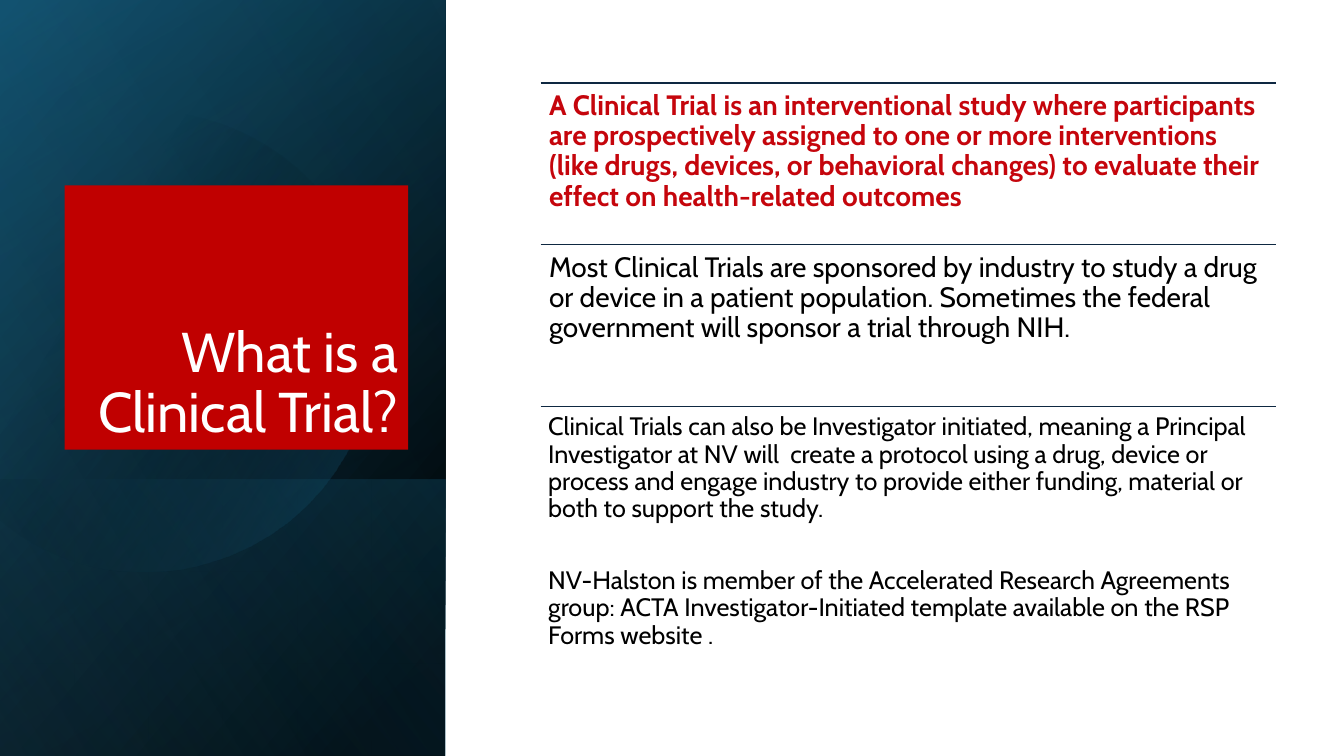
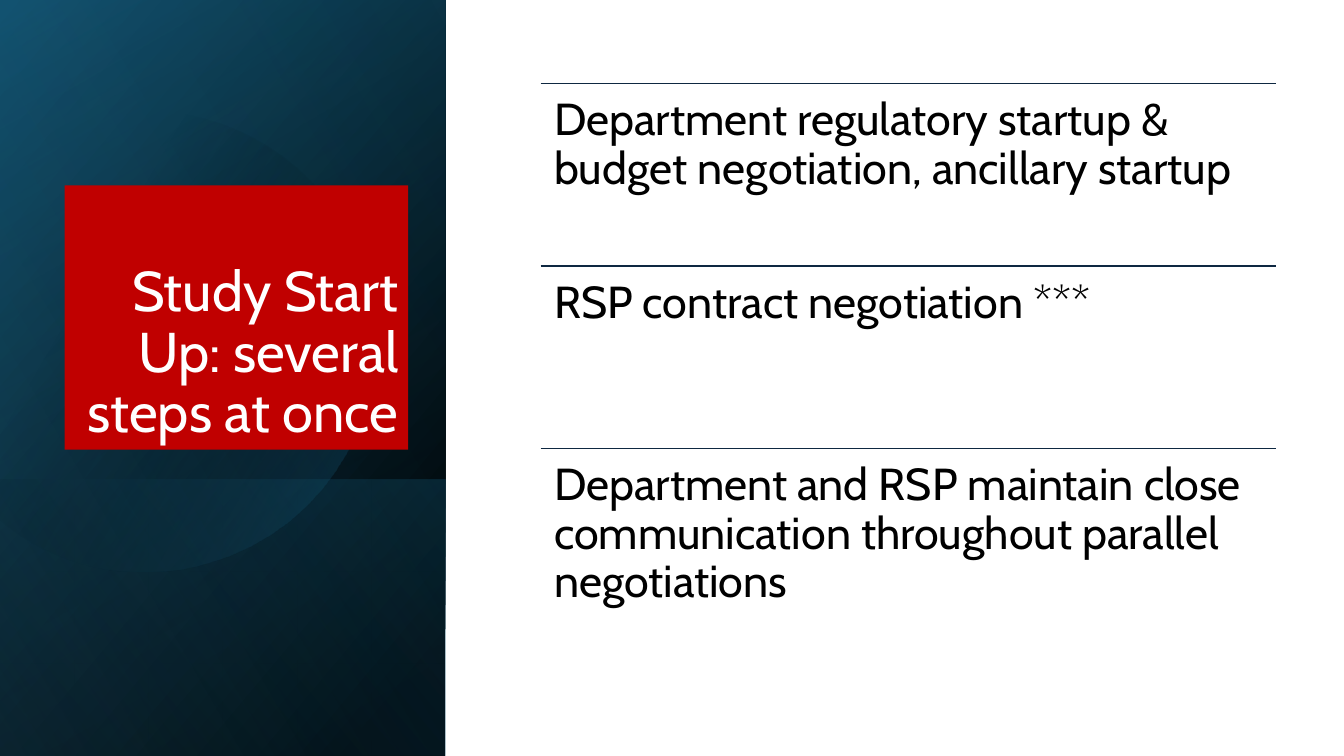
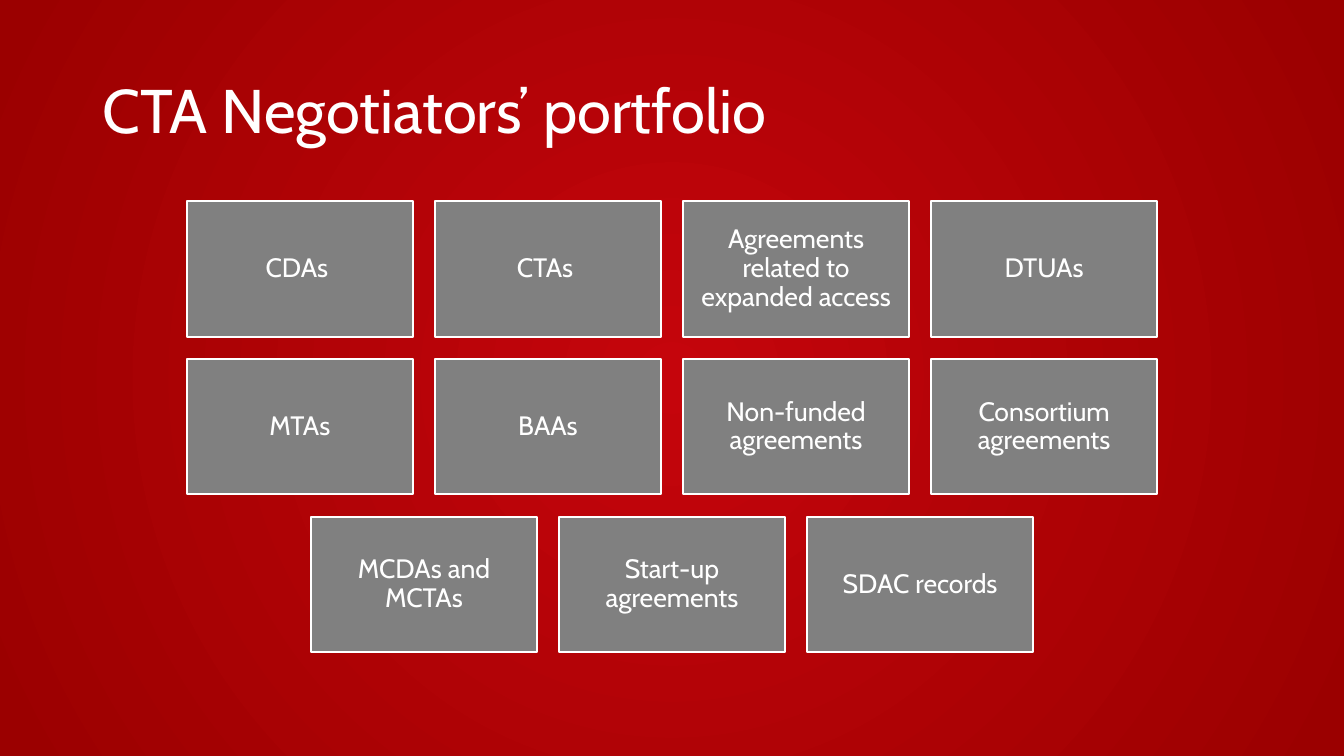
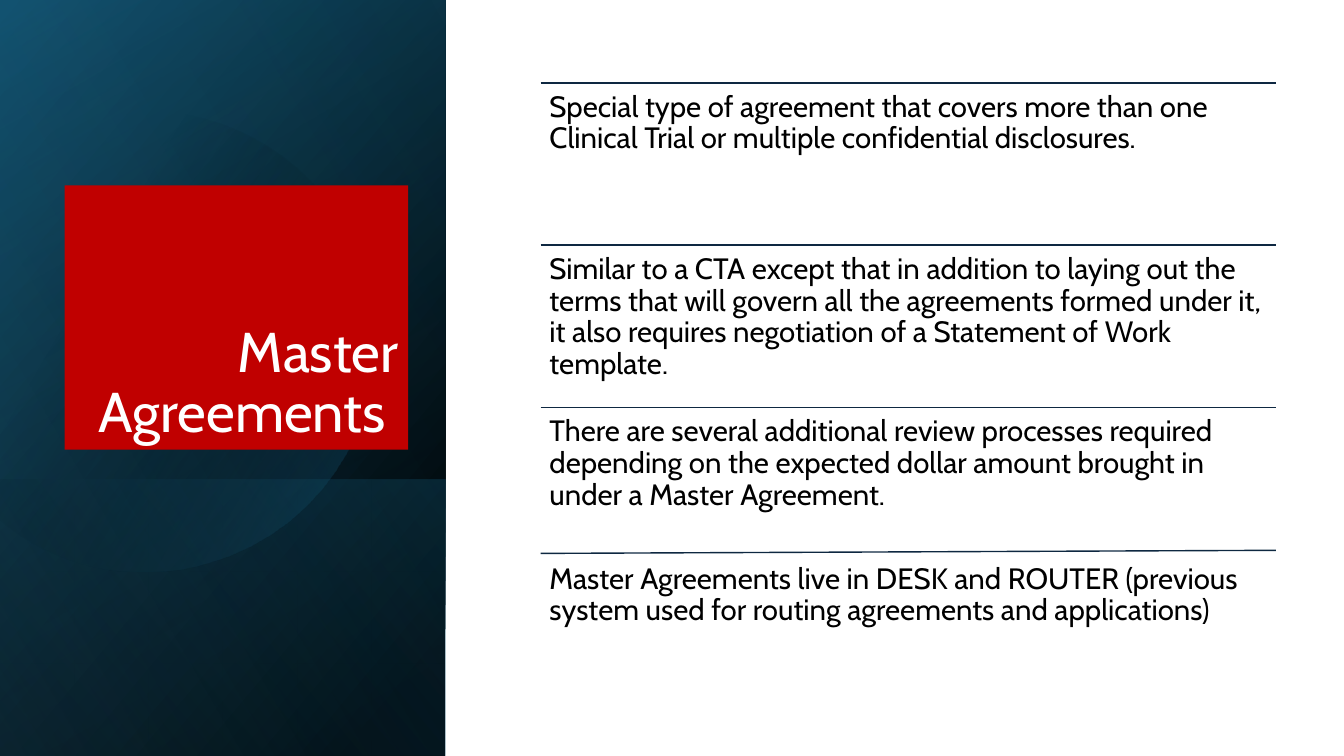
"""Build four slides about clinical trial agreements."""
from pptx import Presentation
from pptx.dml.color import RGBColor
from pptx.enum.shapes import MSO_CONNECTOR, MSO_SHAPE
from pptx.enum.text import MSO_ANCHOR, PP_ALIGN
from pptx.oxml import parse_xml
from pptx.oxml.ns import nsdecls
from pptx.util import Pt

RECTANGLE = MSO_SHAPE.RECTANGLE
STRAIGHT = MSO_CONNECTOR.STRAIGHT
TOP, MIDDLE, BOTTOM = MSO_ANCHOR.TOP, MSO_ANCHOR.MIDDLE, MSO_ANCHOR.BOTTOM
LEFT, CENTER, RIGHT = PP_ALIGN.LEFT, PP_ALIGN.CENTER, PP_ALIGN.RIGHT

FONT = "Cabin"
WHITE, BLACK, RED = "FFFFFF", "000000", "C5050C"
TITLE_RED, DARK_RED, GRAY, NAVY = "C00000", "9B0000", "808080", "0E2841"
TEAL, DEEP_TEAL, SKY = "156082", "104862", "46B1E1"

SLIDE_WIDTH, SLIDE_HEIGHT = 960, 540
PANEL_WIDTH = 318.2
TITLE_BOX = (46.1, 132.5, 245.5, 188.8)
PORTFOLIO_TITLE_BOX = (66, 29, 828, 104)
SECTION_LEFT, SECTION_WIDTH, SECTION_BOTTOM = 386.2, 525.2, 488.2
PARAGRAPH_GAP = 1.78
TILE_WIDTH, TILE_HEIGHT, TILE_GAP, TILE_TOP = 161.2, 96.7, 16, 143.8

FULL_PANEL = (0, 0, PANEL_WIDTH, SLIDE_HEIGHT)
LOWER_PANEL = (0, 342.8, PANEL_WIDTH, 197.2)
PANELS_BELOW = [
    (FULL_PANEL, [(8, BLACK, 100), (100, DEEP_TEAL, 100)], 50),
    (FULL_PANEL, [(0, BLACK, 0), (99, TEAL, 46)], 30),
    (LOWER_PANEL, [(2, TEAL, 29), (100, BLACK, 30)], 130),
]
PANEL_ABOVE = (FULL_PANEL, [(0, BLACK, 0), (99, SKY, 11)], 120)
DISC_STOPS, DISC_ANGLE = [(29, BLACK, 0), (100, TEAL, 43)], 30
DISC_CURVES = [
    [(0, 116), (17, 102), (36, 92), (58, 86)],
    [(58, 86), (74, 81), (91, 79), (107, 79)],
    [(107, 79), (177, 81), (241, 127), (261, 198)],
    [(261, 198), (287, 287), (236, 377), (149, 402)],
    [(149, 402), (95, 418), (38, 404), (0, 371)],
]
CURVE_STEPS = 16

TRIAL = {
    "title": "What is a Clinical Trial?",
    "top": 59.2, "pitch": 115.6,
    "sections": [
        (["A Clinical Trial is an interventional study where participants are prospectively assigned "
          "to one or more interventions (like drugs, devices, or behavioral changes) to evaluate "
          "their effect on health-related outcomes"],
         {"size": 20, "color": RED, "bold": True, "inset": 6}),
        (["Most Clinical Trials are sponsored by industry to study a drug or device in a patient "
          "population. Sometimes the federal government will sponsor a trial through NIH."],
         {"size": 20, "inset": 6}),
        (["Clinical Trials can also be Investigator initiated, meaning a Principal Investigator at NV "
          "will  create a protocol using a drug, device or process and engage industry to provide "
          "either funding, material or both to support the study.",
          "NV-Halston is member of the Accelerated Research Agreements group: ACTA "
          "Investigator-Initiated template available on the RSP Forms website ."],
         {"size": 18, "inset": 5.4}),
    ],
}
START_UP_STYLE = {"size": 32, "inset": 9.6}
START_UP = {
    "title": "Study Start Up: several steps at once",
    "top": 59.6, "pitch": 130.4,
    "sections": [
        (["Department regulatory startup & budget negotiation, ancillary startup"], START_UP_STYLE),
        (["RSP contract negotiation ***"], START_UP_STYLE),
        (["Department and RSP maintain close communication throughout parallel negotiations"],
         START_UP_STYLE),
    ],
}
MASTER_STYLE = {"size": 21, "inset": 6.3}
MASTER = {
    "title": "Master\vAgreements ",
    "top": 59.2, "pitch": 115.9,
    "sections": [
        (["Special type of agreement that covers more than one Clinical Trial or multiple "
          "confidential disclosures."], MASTER_STYLE),
        (["Similar to a CTA except that in addition to laying out the terms that will govern all the "
          "agreements formed under it, it also requires negotiation of a Statement of Work "
          "template."], MASTER_STYLE),
        (["There are several additional review processes required depending on the expected dollar "
          "amount brought in under a Master Agreement.",
          "Master Agreements live in DESK and ROUTER (previous system used for routing agreements "
          "and applications)"], MASTER_STYLE),
    ],
    "extra_rule": (395.3, 393.1),
}
PORTFOLIO_TITLE = "CTA Negotiators’ portfolio"
PORTFOLIO_ROWS = [
    ["CDAs ", "CTAs ", "Agreements related to expanded access", "DTUAs"],
    ["MTAs", "BAAs", "Non-funded agreements", "Consortium agreements"],
    ["MCDAs and MCTAs", "Start-up agreements", "SDAC records"],
]


def rgb(value):
    return RGBColor.from_string(value)


def set_attributes(target, values):
    for name, value in values.items():
        setattr(target, name, value)


def set_gradient(fill, owner, stops, angle=None):
    """Fill with a linear gradient, or a radial one when no angle is given."""
    fill.gradient()
    old = owner.element.xpath(".//a:gradFill")[0]
    stop_xml = "".join(
        f'<a:gs pos="{position * 1000}"><a:srgbClr val="{color}">'
        f'<a:alpha val="{opacity * 1000}"/></a:srgbClr></a:gs>'
        for position, color, opacity in stops)
    if angle is None:
        direction = ('<a:path path="circle"><a:fillToRect l="50000" t="50000" '
                     'r="50000" b="50000"/></a:path>')
    else:
        direction = f'<a:lin ang="{angle * 60000}" scaled="0"/>'
    old.getparent().replace(old, parse_xml(
        f'<a:gradFill {nsdecls("a")} rotWithShape="1"><a:gsLst>{stop_xml}</a:gsLst>'
        f'{direction}</a:gradFill>'))


def add_rectangle(slide, box, fill=None, line=None):
    shape = slide.shapes.add_shape(RECTANGLE, *map(Pt, box))
    shape.shadow.inherit = False
    if fill:
        shape.fill.solid()
        shape.fill.fore_color.rgb = rgb(fill)
    if line:
        shape.line.color.rgb = rgb(line)
        shape.line.width = Pt(1.5)
    else:
        shape.line.fill.background()
    return shape


def write(shape, paragraphs, size, color=BLACK, bold=False, align=LEFT, anchor=TOP,
          inset=None):
    """Put styled paragraphs into a shape."""
    horizontal, vertical = (7.2, 3.6) if inset is None else (inset, inset)
    frame = shape.text_frame
    set_attributes(frame, {
        "text": "\n".join(paragraphs), "word_wrap": True, "vertical_anchor": anchor,
        "margin_left": Pt(horizontal), "margin_right": Pt(horizontal),
        "margin_top": Pt(vertical), "margin_bottom": Pt(vertical)})
    for index, paragraph in enumerate(frame.paragraphs):
        set_attributes(paragraph, {
            "alignment": align, "line_spacing": 0.9,
            "space_before": Pt(PARAGRAPH_GAP * size if index else 0)})
        for run in paragraph.runs:
            set_attributes(run.font, {"name": FONT, "size": Pt(size), "bold": bold})
            run.font.color.rgb = rgb(color)


def add_rule(slide, start_y, end_y):
    ends = (SECTION_LEFT, start_y, SECTION_LEFT + SECTION_WIDTH, end_y)
    rule = slide.shapes.add_connector(STRAIGHT, *map(Pt, ends))
    rule.line.color.rgb = rgb(NAVY)
    rule.line.width = Pt(1)
    rule.element.spPr.append(parse_xml(f'<a:effectLst {nsdecls("a")}/>'))


def add_panel(slide, area, stops, angle):
    """Cover an area with a rectangle that is turned a quarter and mirrored."""
    left, top, width, height = area
    shift = (width - height) / 2
    panel = add_rectangle(slide, (left + shift, top - shift, height, width))
    set_gradient(panel.fill, panel, stops, angle)
    panel.rotation = 90
    panel.element.spPr.xfrm.set("flipH", "1")


def curve_points(curve):
    """Return points along a cubic curve."""
    for step in range(1, CURVE_STEPS + 1):
        end = step / CURVE_STEPS
        start = 1 - end
        weights = (start ** 3, 3 * start ** 2 * end, 3 * start * end ** 2, end ** 3)
        yield tuple(Pt(sum(weight * point[axis] for weight, point in zip(weights, curve)))
                    for axis in (0, 1))


def add_disc(slide):
    builder = slide.shapes.build_freeform(*map(Pt, DISC_CURVES[0][0]))
    builder.add_line_segments(
        [point for curve in DISC_CURVES for point in curve_points(curve)], close=True)
    disc = builder.convert_to_shape()
    disc.shadow.inherit = False
    disc.line.fill.background()
    set_gradient(disc.fill, disc, DISC_STOPS, DISC_ANGLE)


def add_section_slide(slide, content):
    for panel in PANELS_BELOW:
        add_panel(slide, *panel)
    add_disc(slide)
    add_panel(slide, *PANEL_ABOVE)
    title = add_rectangle(slide, TITLE_BOX, TITLE_RED)
    write(title, [content["title"]], 40, WHITE, align=RIGHT, anchor=BOTTOM)
    sections, pitch = content["sections"], content["pitch"]
    for index, (paragraphs, style) in enumerate(sections):
        top = content["top"] + index * pitch
        height = SECTION_BOTTOM - top if index == len(sections) - 1 else pitch
        add_rule(slide, top, top)
        box = (SECTION_LEFT, top, SECTION_WIDTH, height)
        write(slide.shapes.add_textbox(*map(Pt, box)), paragraphs, **style)
    if "extra_rule" in content:
        add_rule(slide, *content["extra_rule"])


def add_portfolio_slide(slide, rows):
    set_gradient(slide.background.fill, slide, [(0, RED, 100), (98, DARK_RED, 100)])
    title = slide.shapes.add_textbox(*map(Pt, PORTFOLIO_TITLE_BOX))
    write(title, [PORTFOLIO_TITLE], 44, WHITE, anchor=MIDDLE)
    for row, labels in enumerate(rows):
        row_width = len(labels) * (TILE_WIDTH + TILE_GAP) - TILE_GAP
        row_left = (SLIDE_WIDTH - row_width) / 2
        top = TILE_TOP + row * (TILE_HEIGHT + TILE_GAP)
        for column, label in enumerate(labels):
            left = row_left + column * (TILE_WIDTH + TILE_GAP)
            tile = add_rectangle(slide, (left, top, TILE_WIDTH, TILE_HEIGHT), GRAY, WHITE)
            write(tile, [label], 19, WHITE, align=CENTER, anchor=MIDDLE, inset=5.7)


def main():
    presentation = Presentation()
    presentation.slide_width, presentation.slide_height = Pt(SLIDE_WIDTH), Pt(SLIDE_HEIGHT)
    blank = presentation.slide_layouts[6]
    for build, content in [
        (add_section_slide, TRIAL),
        (add_section_slide, START_UP),
        (add_portfolio_slide, PORTFOLIO_ROWS),
        (add_section_slide, MASTER),
    ]:
        build(presentation.slides.add_slide(blank), content)
    presentation.save("out.pptx")


if __name__ == "__main__":
    main()
